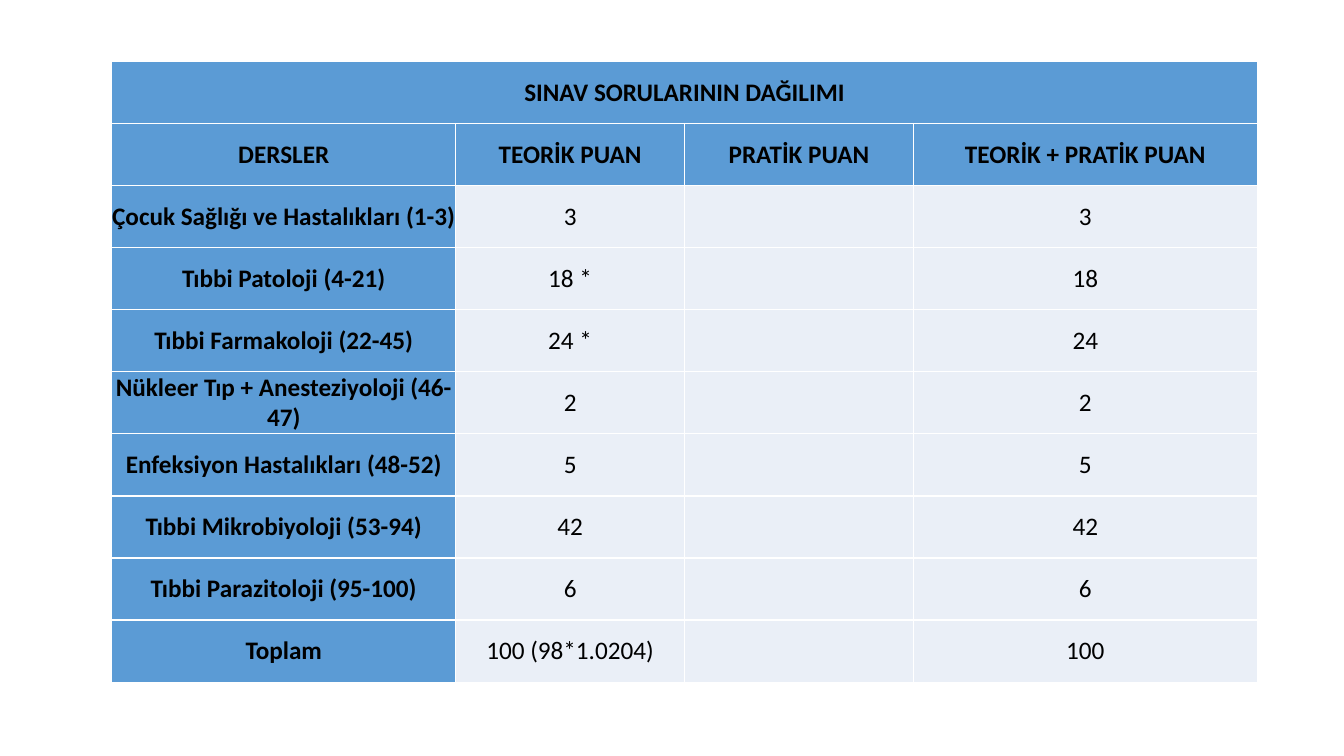
from dataclasses import dataclass

from lxml.etree import fromstring
from pptx import Presentation
from pptx.dml.color import RGBColor as RGB
from pptx.enum.text import MSO_ANCHOR as Anchor, PP_ALIGN as Align
from pptx.util import Inches, Pt


@dataclass(frozen=True)
class Theme:
    head: str = "5B9BD5"
    body: str = "EAEFF7"
    line: str = "FFFFFF"
    ink: str = "000000"
    font: str = "Calibri"
    size: int = 18


theme = Theme()
NS = "http://schemas.openxmlformats.org/drawingml/2006/main"

# Content: course, theory points, practice points, total
rows = [
    ("SINAV SORULARININ DAĞILIMI", "", "", ""),
    ("DERSLER", "TEORİK PUAN", "PRATİK PUAN", "TEORİK + PRATİK PUAN"),
    ("Çocuk Sağlığı ve Hastalıkları (1-3)", "3", "", "3"),
    ("Tıbbi Patoloji (4-21)", "18 *", "", "18"),
    ("Tıbbi Farmakoloji (22-45)", "24 *", "", "24"),
    ("Nükleer Tıp + Anesteziyoloji (46-47)", "2", "", "2"),
    ("Enfeksiyon Hastalıkları (48-52)", "5", "", "5"),
    ("Tıbbi Mikrobiyoloji (53-94)", "42", "", "42"),
    ("Tıbbi Parazitoloji (95-100)", "6", "", "6"),
    ("Toplam", "100 (98*1.0204)", "", "100"),
]
widths = [3.41, 2.27, 2.27, 3.41]

# Slide
deck = Presentation()
deck.slide_width, deck.slide_height = Inches(13.33), Inches(7.5)
slide = deck.slides.add_slide(deck.slide_layouts[6])

# Table grid
frame = slide.shapes.add_table(
    len(rows), len(widths),
    Inches(1.11), Inches(0.61), Inches(sum(widths)), Inches(6.16))
table = frame.table
table.horz_banding = False
for col, width in zip(table.columns, widths):
    col.width = Inches(width)
table.cell(0, 0).merge(table.cell(0, len(widths) - 1))

cell_format = {
    "margin_left": 0, "margin_right": 0, "margin_top": 0, "margin_bottom": 0,
    "vertical_anchor": Anchor.MIDDLE,
}

# Cells: two heading rows and the course column share one look
for r, row in enumerate(rows):
    for c, text in enumerate(row):
        cell = table.cell(r, c)
        is_head = r < 2 or c == 0
        for name, value in cell_format.items():
            setattr(cell, name, value)

        # Borders come before the fill in the cell properties
        props = cell._tc.get_or_add_tcPr()
        for side in "LRTB":
            props.append(fromstring(
                f'<a:ln{side} xmlns:a="{NS}" w="{Pt(1)}"><a:solidFill>'
                f'<a:srgbClr val="{theme.line}"/></a:solidFill></a:ln{side}>'))
        cell.fill.solid()
        cell.fill.fore_color.rgb = RGB.from_string(
            theme.head if is_head else theme.body)

        # Text
        if text:
            para = cell.text_frame.paragraphs[0]
            para.alignment = Align.CENTER
            run = para.add_run()
            run.text = text
            font_format = {
                "name": theme.font, "size": Pt(theme.size), "bold": is_head}
            for name, value in font_format.items():
                setattr(run.font, name, value)
            run.font.color.rgb = RGB.from_string(theme.ink)

deck.save("out.pptx")
